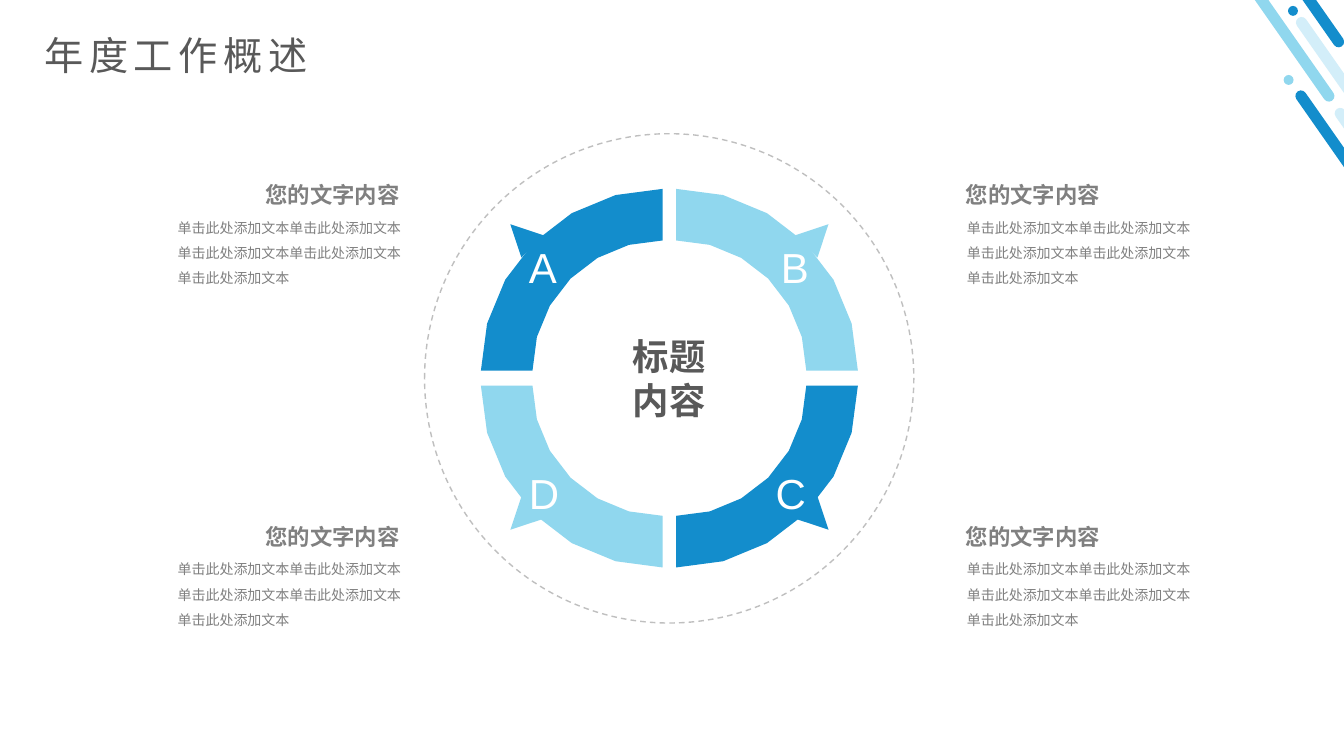
from math import cos, pi, sin

from lxml.etree import SubElement
from pptx import Presentation
from pptx.dml.color import RGBColor as Rgb
from pptx.enum.dml import MSO_LINE_DASH_STYLE as Dash
from pptx.enum.shapes import MSO_SHAPE as Preset
from pptx.enum.text import MSO_ANCHOR as Anchor, MSO_AUTO_SIZE as Fit, PP_ALIGN as Align
from pptx.oxml.ns import qn
from pptx.util import Cm, Pt

COLORS = {"blue": "138DCC", "sky": "90D7EE", "pale": "D3EEF9", "white": "FFFFFF",
          "dark": "595959", "gray": "808080", "dash": "BFBFBF"}
CJK = "Noto Sans CJK SC"
CENTER_X, CENTER_Y = 16.87, 9.53
GAP_X, GAP_Y = 0.17, 0.19
OUTER, INNER = 4.58, 3.28
ARC_STEPS = 6
HEADING = "您的文字内容"
BODY = "单击此处添加文本" * 5

# Left, top, length, colour
STRIPES = [(34.16, 1.8, 5.56, "blue"), (35.15, 2.24, 5.56, "pale"),
           (31.42, -3.84, 7.01, "sky"), (34.59, -0.18, 7.01, "pale"),
           (32.08, -3.89, 5.56, "blue")]
DOTS = [(32.35, 1.89, "sky"), (32.46, 0.15, "blue")]

# Letter, horizontal side, vertical side, colour, letter left, letter top
QUARTERS = [("A", -1, -1, "blue", 13.08, 5.97), ("B", 1, -1, "sky", 19.43, 5.97),
            ("C", 1, 1, "blue", 19.3, 11.66), ("D", -1, 1, "sky", 13.08, 11.66)]


def rgb(name):
    return Rgb.from_string(COLORS[name])


def paint(shape, color):
    shape.shadow.inherit = False
    shape.fill.solid()
    shape.fill.fore_color.rgb = rgb(color)
    shape.line.fill.background()


def add_preset(page, preset, left, top, width, height, color, turn=0):
    shape = page.shapes.add_shape(preset, Cm(left), Cm(top), Cm(width), Cm(height))
    paint(shape, color)
    shape.rotation = turn
    return shape


def write_text(box, text, size, color, font=CJK, bold=False, align=Align.LEFT,
               wrap=True, spacing=None, tracking=0):
    frame = box.text_frame
    frame.text = text
    frame.word_wrap = wrap
    frame.auto_size = Fit.NONE
    frame.vertical_anchor = Anchor.TOP
    for para in frame.paragraphs:
        para.alignment = align
        if spacing:
            para.line_spacing = Pt(spacing)
        for span in para.runs:
            span.font.size = Pt(size)
            span.font.bold = bold
            span.font.name = font
            span.font.color.rgb = rgb(color)
            props = span.font._element
            SubElement(props, qn("a:ea")).set("typeface", CJK)
            if tracking:
                props.set("spc", str(tracking * 100))


def add_text(page, left, top, width, height, text, **style):
    box = page.shapes.add_textbox(Cm(left), Cm(top), Cm(width), Cm(height))
    write_text(box, text, **style)


def add_title(page, text):
    title = page.shapes.title
    title.left, title.top, title.width, title.height = Cm(0.87), Cm(0.66), Cm(33), Cm(1.45)
    write_text(title, text, size=28, color="dark", spacing=34, tracking=4)


def add_corner_stripes(page):
    for left, top, length, color in STRIPES:
        stripe = add_preset(page, Preset.ROUNDED_RECTANGLE, left, top, 0.28, length, color, 325)
        stripe.adjustments[0] = 0.5
    for left, top, color in DOTS:
        add_preset(page, Preset.OVAL, left, top, 0.25, 0.25, color)


def add_quarter(page, side_x, side_y, color):
    """One quarter of the ring with its outward pointer."""
    corner_x, corner_y = CENTER_X + side_x * GAP_X, CENTER_Y + side_y * GAP_Y
    angles = [pi / 2 * step / ARC_STEPS for step in range(ARC_STEPS + 1)]
    arcs = [(OUTER, angle) for angle in angles] + [(INNER, angle) for angle in reversed(angles)]
    points = [(Cm(corner_x + side_x * radius * cos(angle)),
               Cm(corner_y + side_y * radius * sin(angle))) for radius, angle in arcs]
    builder = page.shapes.build_freeform(*points[0])
    builder.add_line_segments(points[1:], close=True)
    paint(builder.convert_to_shape(), color)

    size, middle_y, reach_x, reach_y = 0.79, 9.5, 3.73, 3.57
    turn = side_x * (90 + side_y * 45) % 360
    add_preset(page, Preset.ISOSCELES_TRIANGLE,
               CENTER_X + side_x * reach_x - size / 2,
               middle_y + side_y * reach_y - size / 2, size, size, color, turn)


def add_dashed_circle(page):
    circle = page.shapes.add_shape(Preset.OVAL, Cm(10.7), Cm(3.37), Cm(12.33), Cm(12.33))
    circle.shadow.inherit = False
    circle.fill.background()
    circle.line.color.rgb = rgb("dash")
    circle.line.width = Pt(1)
    circle.line.dash_style = Dash.DASH


def add_caption(page, side_x, side_y):
    """Heading and text beside one quarter."""
    on_left = side_x < 0
    top = 4.43 if side_y < 0 else 13.04
    add_text(page, 4.23 if on_left else 24.12, top + 0.75, 6.38, 1.9, BODY,
             size=10, color="gray", spacing=18.1)
    add_text(page, 4.53 if on_left else 24.09, top, 5.79, 0.94, HEADING,
             size=16, color="gray", bold=True, spacing=19.5,
             align=Align.RIGHT if on_left else Align.LEFT)


def main():
    deck = Presentation()
    deck.slide_width, deck.slide_height = Cm(33.87), Cm(19.05)
    page = deck.slides.add_slide(deck.slide_layouts[5])

    # Corner and title
    add_corner_stripes(page)
    add_title(page, "年度工作概述")

    # Ring
    add_dashed_circle(page)
    for letter, side_x, side_y, color, left, top in QUARTERS:
        add_quarter(page, side_x, side_y, color)
        add_text(page, left, top, 1.25, 1.52, letter,
                 size=30, color="white", font="Arial", wrap=False)
    add_text(page, 15.7, 8.28, 2.34, 2.46, "标题\n内容",
             size=26, color="dark", font="Arial", bold=True, wrap=False, spacing=31.4)

    # Captions
    for _, side_x, side_y, *_ in QUARTERS:
        add_caption(page, side_x, side_y)

    deck.save("out.pptx")


if __name__ == "__main__":
    main()
